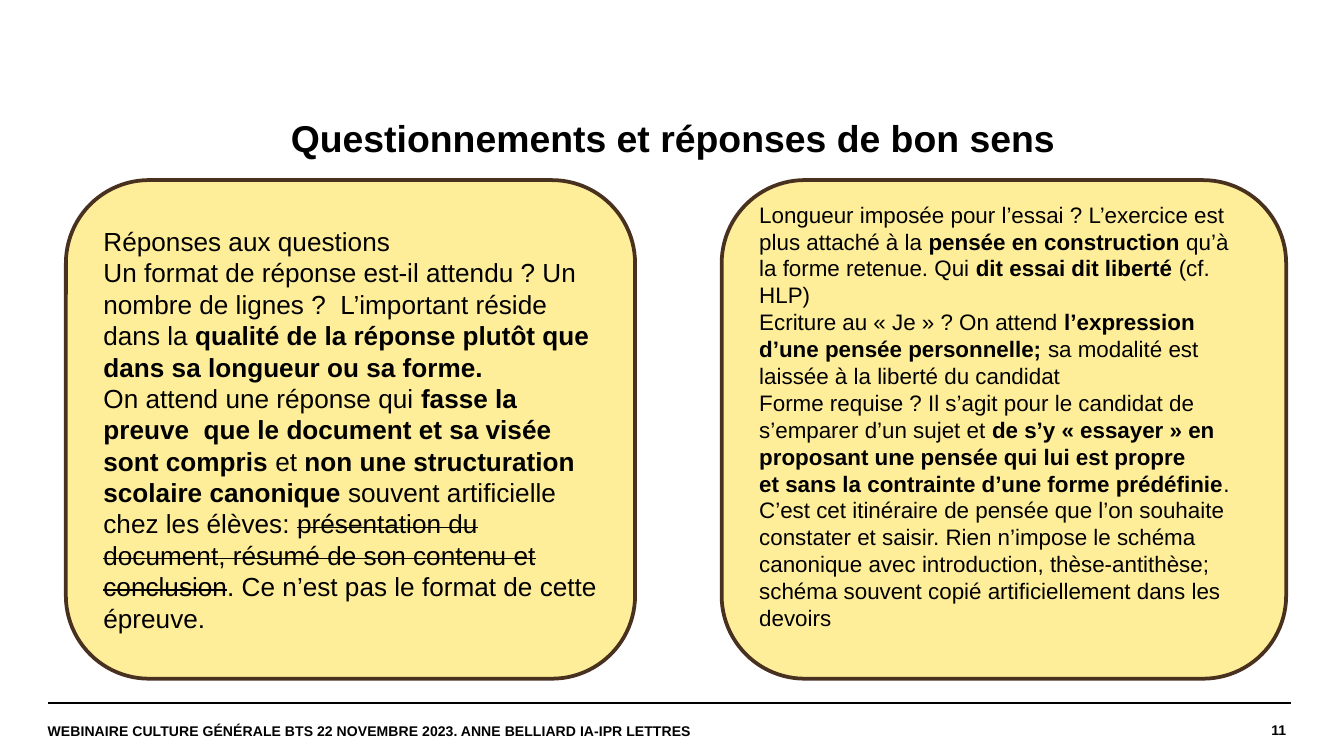
"""Build the slide on common-sense questions and answers for the BTS essay."""
from lxml import etree
from pptx import Presentation, util as u
from pptx.dml.color import RGBColor
from pptx.enum import shapes, text
from pptx.oxml.ns import qn

PX = 4572
INK = {"text": "000000", "card": "FFEE99", "edge": "49311F"}
FONT = "Arial"
LEFT, MID, RIGHT = text.PP_ALIGN.LEFT, text.PP_ALIGN.CENTER, text.PP_ALIGN.RIGHT

ANSWERS = [
    [("Réponses aux questions", "")],
    [("Un format de réponse est-il attendu ? Un nombre de lignes ?  L’important réside dans la ", ""),
     ("qualité de la réponse plutôt que dans sa longueur ou sa forme.", "bold")],
    [("On attend une réponse qui ", ""),
     ("fasse la preuve  que le document et sa visée sont compris ", "bold"),
     ("et ", ""),
     ("non une structuration scolaire canonique ", "bold"),
     ("souvent artificielle chez les élèves: ", ""),
     ("présentation du document, résumé de son contenu et conclusion", "strike"),
     (". Ce n’est pas le format de cette épreuve.", "")],
]
ESSAY = [
    [("Longueur imposée pour l’essai ? L’exercice est plus attaché à la ", ""),
     ("pensée en construction ", "bold"),
     ("qu’à la forme retenue. Qui ", ""),
     ("dit essai dit liberté ", "bold"),
     ("(cf. HLP)", "")],
    [("Ecriture au « Je » ? On attend", ""),
     (" l’expression d’une pensée personnelle; ", "bold"),
     ("sa modalité est laissée à la liberté du candidat", "")],
    [("Forme requise ? Il s’agit pour le candidat de s’emparer d’un sujet et ", ""),
     ("de s’y « essayer » en proposant une pensée qui lui est propre", "bold"),
     ("\n", ""),
     ("et sans la contrainte d’une forme prédéfinie", "bold"),
     (". C’est cet itinéraire de pensée que l’on souhaite constater et saisir. "
      "Rien n’impose le schéma canonique avec introduction, thèse-antithèse; "
      "schéma souvent copié artificiellement dans les devoirs", "")],
]


def color(name):
    return RGBColor.from_string(INK[name])


def emu(*sizes):
    return [u.Emu(size * PX) for size in sizes]


def style(para, size, align, bold=None):
    para.alignment = align
    font = para.font
    font.name, font.size, font.bold = FONT, u.Pt(size), bold
    font.color.rgb = color("text")


def add_run(para, words, look):
    if words == "\n":
        para.add_line_break()
        return
    run = para.add_run()
    run.text = words
    if look == "bold":
        run.font.bold = True
    elif look == "strike":
        run._r.get_or_add_rPr().set("strike", "sngStrike")


def add_label(slide, box, words, size, align, pad=(0, 0)):
    frame = slide.shapes.add_textbox(*emu(*box)).text_frame
    frame.word_wrap = True
    frame.vertical_anchor = text.MSO_ANCHOR.MIDDLE
    frame.margin_left, frame.margin_top = emu(*pad)
    frame.margin_right, frame.margin_bottom = emu(*pad)
    para = frame.paragraphs[0]
    para.text = words
    style(para, size, align, True)
    return para


def add_card(slide, box, paras, size, foot):
    card = slide.shapes.add_shape(shapes.MSO_SHAPE.ROUNDED_RECTANGLE, *emu(*box))
    card.shadow.inherit = False
    card.fill.solid()
    card.fill.fore_color.rgb = color("card")
    card.line.color.rgb = color("edge")
    card.line.width = u.Pt(2)
    frame = card.text_frame
    frame.word_wrap = True
    frame.vertical_anchor = text.MSO_ANCHOR.MIDDLE
    frame.margin_bottom = u.Emu(foot * PX)
    for i, runs in enumerate(paras):
        para = frame.add_paragraph() if i else frame.paragraphs[0]
        style(para, size, LEFT)
        for words, look in runs:
            add_run(para, words, look)


def add_rule(slide, left, top, width):
    ends = emu(left, top, left + width, top)
    rule = slide.shapes.add_connector(shapes.MSO_CONNECTOR.STRAIGHT, *ends)
    rule.line.color.rgb = color("text")
    rule.line.width = u.Pt(0.8)
    etree.SubElement(rule._element.spPr, qn("a:effectLst"))


def main():
    deck = Presentation()
    deck.slide_width, deck.slide_height = emu(2000, 1125)
    slide = deck.slides.add_slide(deck.slide_layouts[6])
    for left in (71, 78):
        add_rule(slide, left, 1046, 1843)
    add_label(slide, (618 + 1000, 1047, 296, 78), "11", 7.5, RIGHT)
    add_label(slide, (71, 1050, 1034, 76),
              "WEBINAIRE CULTURE GÉNÉRALE BTS 22 NOVEMBRE 2023. ANNE BELLIARD IA-IPR LETTRES",
              7.5, LEFT)
    title = add_label(slide, (2, 150, 2000, 118), "Questionnements et réponses de bon sens",
                      20, MID, (20, 10))
    title.line_spacing = 0.9
    add_card(slide, (98, 268, 847, 742), ANSWERS, 14, 10)
    add_card(slide, (1074, 268, 840, 742), ESSAY, 12, 50)
    deck.save("out.pptx")


if __name__ == "__main__":
    main()
